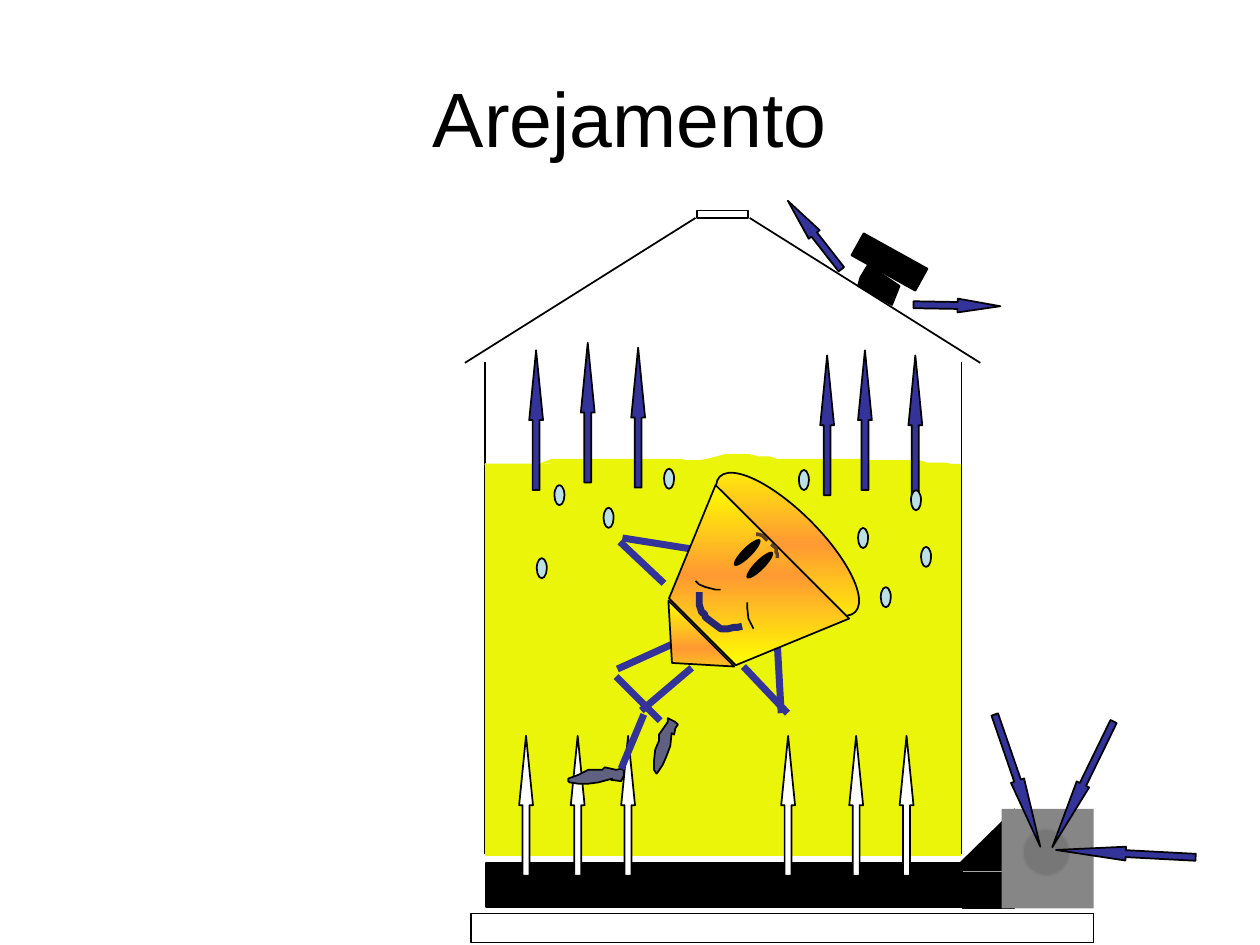
from copy import deepcopy
from lxml import etree
from pptx import Presentation
from pptx.dml.color import RGBColor
from pptx.enum.shapes import MSO_CONNECTOR, MSO_SHAPE
from pptx.enum.text import MSO_ANCHOR, PP_ALIGN
from pptx.oxml.ns import qn
from pptx.util import Inches, Pt

deck = Presentation()
deck.slide_width, deck.slide_height = Inches(10), Inches(7.5)
slide = deck.slides.add_slide(deck.slide_layouts[6])
shapes = slide.shapes

BLACK, WHITE, GRAIN, BLUE = "000000", "FFFFFF", "EBF50A", "333399"
CONE = ["FFFF00", "FF9933", "FFFF00"]
RECT, OVAL, ARROW = MSO_SHAPE.RECTANGLE, MSO_SHAPE.OVAL, MSO_SHAPE.UP_ARROW


def paint(item, fill, edge, width):
    if edge:
        item.line.color.rgb = RGBColor.from_string(edge)
        item.line.width = Pt(width)
    else:
        item.line.fill.background()
    props = item._element.spPr
    if item.shape_type == 9 or not hasattr(item, "fill"):
        etree.SubElement(props, qn("a:effectLst"))
        return
    item.shadow.inherit = False
    if fill is None:
        item.fill.background()
    elif isinstance(fill, str):
        item.fill.solid()
        item.fill.fore_color.rgb = RGBColor.from_string(fill)
    else:
        item.fill.gradient()
        item.fill.gradient_angle = 270
        grad = props.find(qn("a:gradFill"))
        grad.set("rotWithShape", "0")
        stops = grad.find(qn("a:gsLst"))
        stops.insert(1, deepcopy(stops[0]))
        for stop, tone, place in zip(item.fill.gradient_stops, fill, (0, 0.5, 1)):
            stop.color.rgb = RGBColor.from_string(tone)
            stop.position = place


def draw(kind, spot, fill=None, edge=BLACK, width=1, turn=0, head=None, close=False):
    if kind == "line":
        item = shapes.add_connector(MSO_CONNECTOR.STRAIGHT, *map(Inches, spot))
    elif kind == "path":
        dots = [(round(x * 100), round(y * 100)) for x, y in spot]
        pen = shapes.build_freeform(*dots[0], scale=Inches(0.01))
        pen.add_line_segments(dots[1:], close=close)
        item = pen.convert_to_shape()
    else:
        item = shapes.add_shape(kind, *map(Inches, spot))
        item.rotation = turn
    if head:
        item.adjustments[0], item.adjustments[1] = 0.5, head
    paint(item, fill, edge, width)


for x, peak in [(3.69, 5.52), (7.78, 5.95)]:
    draw("line", (x, 2.88, peak, 1.73))
draw(RECT, (5.53, 1.67, 0.41, 0.06))
draw("path", [(6.81, 2.27), (6.83, 2.2), (6.89, 2.1), (7.14, 2.27), (7.08, 2.42), (6.81, 2.27)], BLACK)
draw(RECT, (6.77, 1.98, 0.58, 0.2), BLACK, turn=29)
for x in (7.63, 3.85):
    draw("line", (x, 6.78, x, 2.87))

draw("path", [
    (3.85, 3.68), (3.87, 3.71), (4.14, 3.71), (4.24, 3.7), (4.3, 3.68), (4.38, 3.65),
    (5.41, 3.65), (5.45, 3.66), (5.55, 3.66), (5.61, 3.65), (5.69, 3.63), (5.76, 3.61),
    (5.94, 3.61), (6.02, 3.63), (6.11, 3.63), (6.17, 3.65), (6.86, 3.65), (6.9, 3.66),
    (7.3, 3.66), (7.36, 3.68), (7.51, 3.68), (7.55, 3.69), (7.62, 3.69)], GRAIN, GRAIN)
draw(RECT, (3.86, 3.69, 3.76, 3.1), GRAIN, GRAIN)

for x, y in [(4.61, 2.76 - 0.04), (5.01, 2.76), (6.51, 2.82), (6.81, 2.78), (7.21, 2.82), (4.2, 2.78)]:
    draw(ARROW, (x, y, 0.11, 1.11), BLUE, head=5.05)
for x, y, turn in [(7.54, 2.08, 91), (6.41, 1.52, 322)]:
    draw(ARROW, (x, y, 0.11, 0.69), BLUE, turn=turn, head=3.09)

draw(RECT, (3.74, 7.25, 4.94, 0.23))
draw(RECT, (3.86, 6.85, 3.78, 0.35), BLACK)
draw(RECT, (7.64, 6.93, 0.41, 0.28), BLACK)
draw(MSO_SHAPE.RIGHT_TRIANGLE, (7.55, 6.41, 0.5, 0.51), BLACK, None, turn=270)
for x in (4.53, 6.74, 7.14, 4.12, 6.2, 4.93):
    draw(ARROW, (x, 5.84, 0.11, 1.11), WHITE, head=5.01)

for limb in [(5.27, 4.63, 4.92, 4.3), (4.94, 4.27, 5.76, 4.4), (5.9, 5.29, 6.25, 5.66),
             (6.2, 5.66, 6.16, 4.95), (5.43, 5.07, 4.9, 5.31)]:
    draw("line", limb, edge=BLUE, width=4)
draw("path", [
    (5.23, 5.83), (5.23, 5.88), (5.2, 5.95), (5.19, 6.04), (5.19, 6.11), (5.21, 6.14),
    (5.22, 6.13), (5.26, 6.07), (5.29, 6), (5.32, 5.92), (5.33, 5.82), (5.35, 5.83),
    (5.36, 5.78), (5.38, 5.75), (5.36, 5.73), (5.3, 5.7), (5.3, 5.73), (5.23, 5.83)], "606080")
for limb in [(4.89, 5.37, 5.24, 5.72), (5.49, 5.3, 5.09, 5.64)]:
    draw("line", limb, edge=BLUE, width=4)
draw("path", [
    (4.8, 6.09), (4.78, 6.11), (4.67, 6.11), (4.59, 6.15), (4.51, 6.18), (4.51, 6.2),
    (4.52, 6.21), (4.59, 6.22), (4.67, 6.22), (4.75, 6.21), (4.86, 6.18), (4.85, 6.19),
    (4.93, 6.2), (4.95, 6.16), (4.95, 6.12), (4.94, 6.1), (4.89, 6.11), (4.8, 6.09)], "606080")
draw("line", (5.11, 5.67, 4.93, 6.1), edge=BLUE, width=4)

draw(OVAL, (5.49, 4.06, 1.52, 0.52), CONE, turn=45)
draw("path", [(5.68, 3.85), (5.31, 4.75), (5.84, 5.28), (6.74, 4.91)], CONE, close=True)
draw(MSO_SHAPE.ISOSCELES_TRIANGLE, (5.08, 4.98, 0.74, 0.33), CONE, turn=225)

draw("path", [(5.52, 4.61), (5.55, 4.64), (5.6, 4.66), (5.68, 4.68), (5.72, 4.68)])
draw("path", [(6.12, 4.32), (6.16, 4.35), (6.16, 4.38), (6.17, 4.4), (6.17, 4.43)], edge="604020", width=2)
draw("path", [(6, 4.24), (6.02, 4.24), (6.05, 4.25), (6.09, 4.29)], edge="604020", width=2)
for x, y in [(5.89, 4.24), (5.99, 4.34)]:
    draw(OVAL, (x, y, 0.08, 0.29), BLACK, None, turn=45)
draw("path", [
    (5.55, 4.7), (5.55, 4.8), (5.57, 4.86), (5.59, 4.87), (5.6, 4.9), (5.64, 4.93),
    (5.72, 4.99), (5.78, 4.99), (5.82, 4.98), (5.85, 4.98), (5.89, 4.97)], edge="262673", width=4)
draw("path", [(5.93, 4.78), (5.93, 4.82), (5.94, 4.91), (5.96, 4.95), (5.98, 4.99)])

draw(RECT, (7.95, 6.42, 0.73, 0.79), "868686", None)
draw(OVAL, (8.12, 6.58, 0.37, 0.37), "777777", "808080")
for x, y, turn in [(8.02, 5.64, 161), (8.88, 6.22, 273), (8.54, 5.67, 206)]:
    draw(ARROW, (x, y, 0.11, 1.11), BLUE, turn=turn, head=5.05)

for x, y in [(4.79, 4.03), (4.26, 4.43), (7.23, 3.89), (5.27, 3.72), (6.81, 4.19),
             (4.4, 3.85), (6.34, 3.73), (6.99, 4.66), (7.31, 4.34)]:
    draw(OVAL, (x, y, 0.08, 0.16), "BBE0E3")

title = shapes.add_textbox(Inches(0.5), Inches(0.3), Inches(9), Inches(1.25))
frame = title.text_frame
frame.word_wrap = True
frame.vertical_anchor = MSO_ANCHOR.MIDDLE
frame.text = "Arejamento"
line = frame.paragraphs[0]
line.alignment = PP_ALIGN.CENTER
font = line.runs[0].font
font.name, font.size = "Arial", Pt(44)
font.color.rgb = RGBColor.from_string(BLACK)

deck.save("out.pptx")
